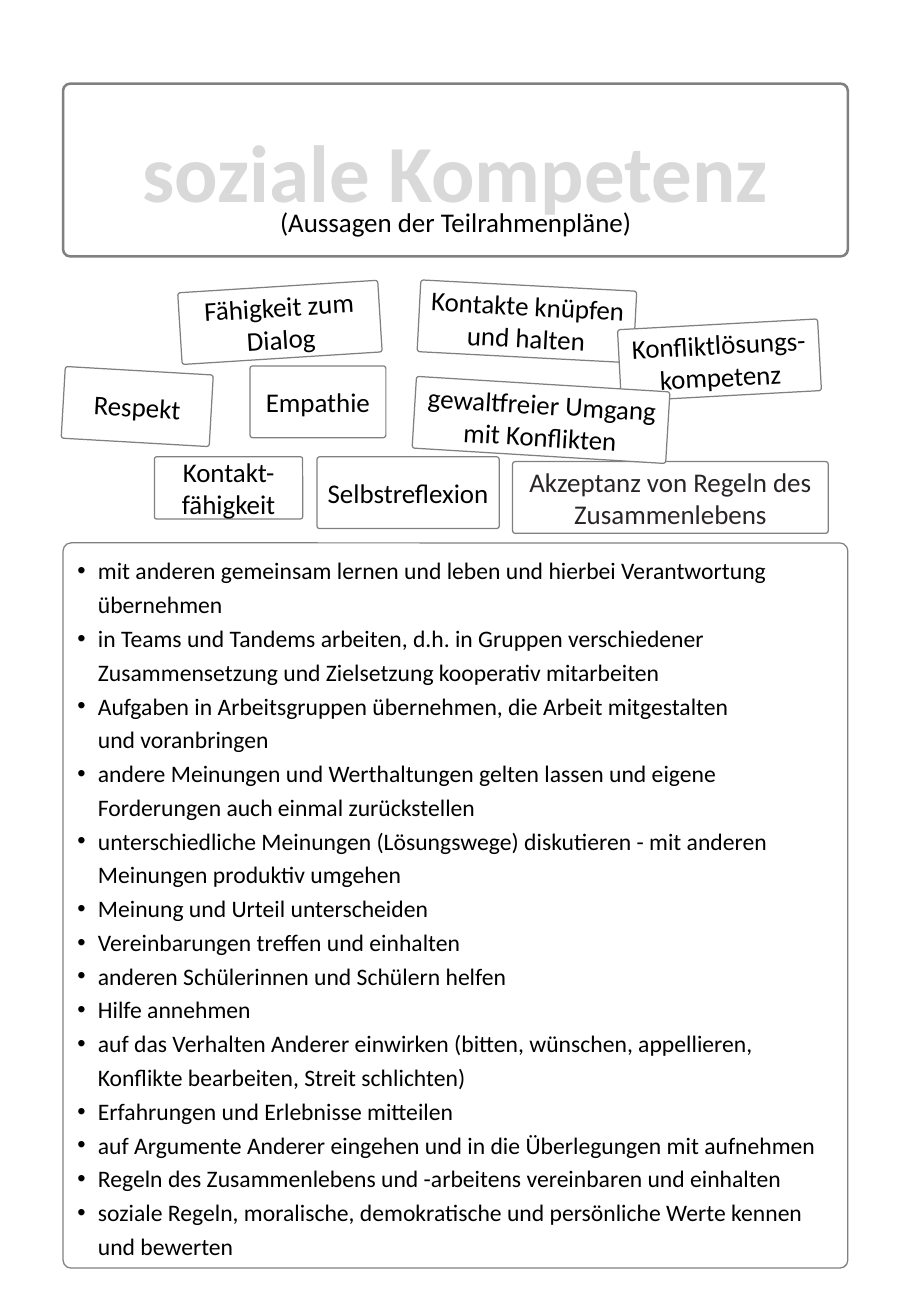
"""Build a one-page handout on social competence."""
import pptx
import pptx.util
import pptx.dml.color
import pptx.enum.shapes
import pptx.enum.text
import pptx.oxml
import pptx.oxml.ns

Cm = pptx.util.Cm
Pt = pptx.util.Pt
RGBColor = pptx.dml.color.RGBColor
ALIGN = pptx.enum.text.PP_ALIGN
MIDDLE = pptx.enum.text.MSO_ANCHOR.MIDDLE

WHITE = RGBColor(0xFF, 0xFF, 0xFF)
BLACK = RGBColor(0, 0, 0)
CHARCOAL = RGBColor(0x29, 0x25, 0x26)
GREY = RGBColor(0x80, 0x80, 0x80)
LIGHT_GREY = RGBColor(0xD9, 0xD9, 0xD9)

LEFT, WIDTH = 1.32, 16.41
CARD_HEIGHT = 1.5

CARDS = [
    ("Fähigkeit zum Dialog", 3.76, 5.99, 4.19, CARD_HEIGHT, -3.6, BLACK),
    ("Empathie", 5.23, 7.65, 2.84, CARD_HEIGHT, 0, BLACK),
    ("Respekt", 1.32, 7.75, 3.1, CARD_HEIGHT, 3.3, BLACK),
    ("Kontakte knüpfen und halten", 8.76, 5.97, 4.52, CARD_HEIGHT, 3, BLACK),
    ("Kontakt-fähigkeit", 3.23, 9.55, 3.1, 1.3, 0, BLACK),
    ("Konfliktlösungs-kompetenz", 12.95, 6.78, 4.19, CARD_HEIGHT, -3.1, BLACK),
    ("Akzeptanz von Regeln des Zusammenlebens", 10.72, 9.65, 6.6, CARD_HEIGHT, 0, CHARCOAL),
    ("gewaltfreier Umgang mit Konflikten", 8.66, 8.03, 5.31, CARD_HEIGHT, 3.5, BLACK),
    ("Selbstreflexion", 6.63, 9.55, 3.81, CARD_HEIGHT, 0, BLACK),
]

STATEMENTS = [
    "mit anderen gemeinsam lernen und leben und hierbei Verantwortung\vübernehmen",
    "in Teams und Tandems arbeiten, d.h. in Gruppen verschiedener\v"
    "Zusammensetzung und Zielsetzung kooperativ mitarbeiten",
    "Aufgaben in Arbeitsgruppen übernehmen, die Arbeit mitgestalten\vund voranbringen",
    "andere Meinungen und Werthaltungen gelten lassen und eigene\v"
    "Forderungen auch einmal zurückstellen",
    "unterschiedliche Meinungen (Lösungswege) diskutieren - mit anderen\v"
    "Meinungen produktiv umgehen",
    "Meinung und Urteil unterscheiden",
    "Vereinbarungen treffen und einhalten",
    "anderen Schülerinnen und Schülern helfen",
    "Hilfe annehmen",
    "auf das Verhalten Anderer einwirken (bitten, wünschen, appellieren,\v"
    "Konflikte bearbeiten, Streit schlichten)",
    "Erfahrungen und Erlebnisse mitteilen",
    "auf Argumente Anderer eingehen und in die Überlegungen mit aufnehmen",
    "Regeln des Zusammenlebens und -arbeitens vereinbaren und einhalten",
    "soziale Regeln, moralische, demokratische und persönliche Werte kennen\vund bewerten",
]


def add_frame(left, top, width, height, corner, line_width):
    box = page.shapes.add_shape(
        pptx.enum.shapes.MSO_SHAPE.ROUNDED_RECTANGLE,
        Cm(left), Cm(top), Cm(width), Cm(height))
    box.adjustments[0] = corner
    box.shadow.inherit = False
    box.fill.background()
    box.line.color.rgb = GREY
    box.line.width = Pt(line_width)
    frame = box.text_frame
    frame.word_wrap = True
    frame.vertical_anchor = MIDDLE
    frame.margin_left = frame.margin_right = Cm(0.1)
    return box


def style(para, size, color, alignment=ALIGN.CENTER):
    para.alignment = alignment
    para.font.name = "Calibri"
    para.font.size = Pt(size)
    para.font.color.rgb = color


deck = pptx.Presentation()
deck.slide_width, deck.slide_height = Cm(19.05), Cm(27.51)
page = deck.slides.add_slide(deck.slide_layouts[5])

add_frame(LEFT, 1.75, WIDTH, 3.61, 0.04, 1.5)
title = page.shapes.title
title.left, title.top, title.width, title.height = Cm(LEFT), Cm(1.75), Cm(WIDTH), Cm(3.61)
title.text_frame.text = "soziale Kompetenz"
title.text_frame.vertical_anchor = MIDDLE
style(title.text_frame.paragraphs[0], 48, LIGHT_GREY)
title.text_frame.paragraphs[0].font.bold = True

subtitle = page.shapes.add_textbox(Cm(3.23), Cm(4.17), Cm(12.6), Cm(0.94))
subtitle.text_frame.word_wrap = True
subtitle.text_frame.text = "(Aussagen der Teilrahmenpläne)"
style(subtitle.text_frame.paragraphs[0], 16, BLACK)

for text, left, top, width, height, angle, color in CARDS:
    card = add_frame(left, top, width, height, 0.037, 0.75)
    card.fill.solid()
    card.fill.fore_color.rgb = WHITE
    card.rotation = angle
    card.text_frame.text = text
    style(card.text_frame.paragraphs[0], 16, color)

panel = add_frame(LEFT, 11.35, WIDTH, 15.16, 0.011, 0.75)
panel.text_frame.margin_left = Cm(0.25)
panel.text_frame.text = "\n".join(STATEMENTS)
for para in panel.text_frame.paragraphs:
    para.line_spacing = Pt(20)
    properties = para._p.get_or_add_pPr()
    properties.set("marL", str(Cm(0.43)))
    properties.set("indent", str(-Cm(0.43)))
    properties.append(pptx.oxml.parse_xml(
        '<a:buFont %s typeface="Arial"/>' % pptx.oxml.ns.nsdecls("a")))
    properties.append(pptx.oxml.parse_xml(
        '<a:buChar %s char="•"/>' % pptx.oxml.ns.nsdecls("a")))
    style(para, 14, BLACK, ALIGN.LEFT)

deck.save("out.pptx")
